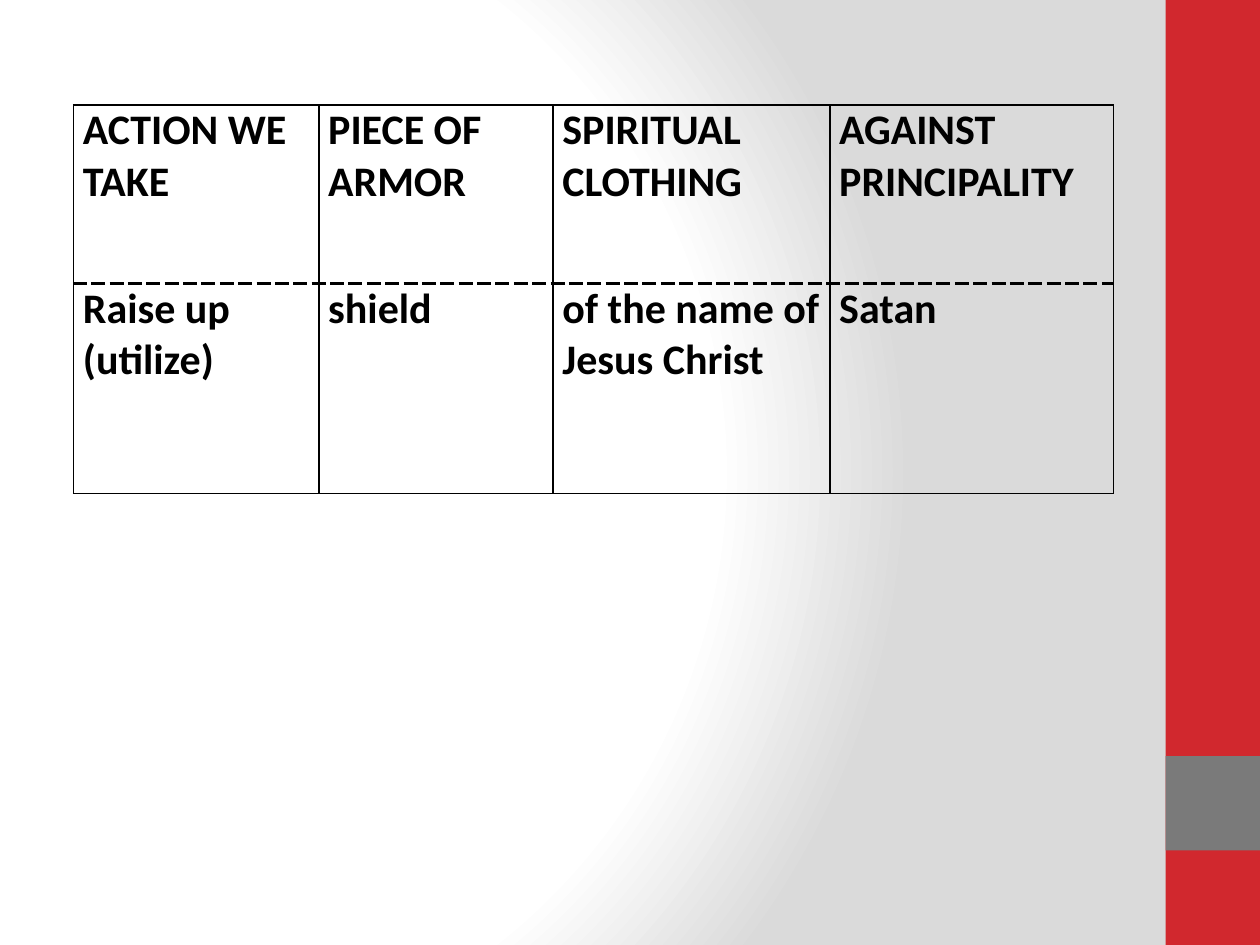
from pptx import Presentation
from pptx.dml.color import RGBColor
from pptx.enum.shapes import MSO_SHAPE as Shape
from pptx.oxml import parse_xml
from pptx.oxml.ns import nsdecls, qn
from pptx.util import Pt

BLACK = RGBColor(0x00, 0x00, 0x00)
WHITE = RGBColor(0xFF, 0xFF, 0xFF)
PALE_GRAY = RGBColor(0xDA, 0xDA, 0xDA)
RED = RGBColor(0xD1, 0x28, 0x2E)
GRAY = RGBColor(0x7A, 0x7A, 0x7A)

WIDTH, HEIGHT = 720, 540
BAND = 54

ROWS = [
    ["ACTION WE TAKE", "PIECE OF ARMOR", "SPIRITUAL CLOTHING", "AGAINST PRINCIPALITY"],
    ["Raise up (utilize)", "shield", "of the name of Jesus Christ", "Satan"],
]
COLUMN_WIDTHS = [140.2, 133.8, 158.2, 162]
ROW_HEIGHTS = [102, 120]


class SlideBuilder:
    font = {"name": "Calibri", "size": Pt(24), "bold": True}
    margins = {"margin_left": Pt(5.4), "margin_right": Pt(5.4),
               "margin_top": 0, "margin_bottom": 0}
    thin = (1, "solid")
    dashed = (2.25, "sysDash")

    def __init__(self, slide):
        self.slide = slide

    def background(self, stops, focus):
        self.slide.background.fill.solid()
        properties = self.slide.element.find(".//" + qn("p:bgPr"))
        stop_xml = "".join(
            f'<a:gs pos="{position * 1000}"><a:srgbClr val="{color}"/></a:gs>'
            for position, color in stops)
        focus_xml = " ".join(f'{side}="{value * 1000}"' for side, value in focus.items())
        properties.replace(properties[0], parse_xml(
            f'<a:gradFill {nsdecls("a")} rotWithShape="1"><a:gsLst>{stop_xml}</a:gsLst>'
            f'<a:path path="circle"><a:fillToRect {focus_xml}/></a:path></a:gradFill>'))

    def rectangle(self, left, top, width, height, color):
        shape = self.slide.shapes.add_shape(
            Shape.RECTANGLE, Pt(left), Pt(top), Pt(width), Pt(height))
        shape.shadow.inherit = False
        shape.fill.solid()
        shape.fill.fore_color.rgb = color
        shape.line.fill.background()

    def border(self, cell, side, style):
        width, dash = style
        cell._tc.get_or_add_tcPr().append(parse_xml(
            f'<a:ln{side} {nsdecls("a")} w="{Pt(width)}"><a:solidFill>'
            f'<a:srgbClr val="{BLACK}"/></a:solidFill><a:prstDash val="{dash}"/></a:ln{side}>'))

    def cell(self, cell, text, borders):
        for name, value in self.margins.items():
            setattr(cell, name, value)
        for side, style in borders.items():
            self.border(cell, side, style)
        cell.fill.background()
        cell.text = text
        font = cell.text_frame.paragraphs[0].runs[0].font
        for name, value in self.font.items():
            setattr(font, name, value)
        font.color.rgb = BLACK

    def table(self, left, top, widths, heights, rows):
        table = self.slide.shapes.add_table(
            len(rows), len(widths), Pt(left), Pt(top),
            Pt(sum(widths)), Pt(sum(heights))).table
        table.first_row = table.horz_banding = False
        for column, width in zip(table.columns, widths):
            column.width = Pt(width)
        for row, height in zip(table.rows, heights):
            row.height = Pt(height)
        for i, texts in enumerate(rows):
            # Only the line between rows is dashed
            borders = {
                "L": self.thin,
                "R": self.thin,
                "T": self.dashed if i else self.thin,
                "B": self.dashed if i < len(rows) - 1 else self.thin,
            }
            for j, text in enumerate(texts):
                self.cell(table.cell(i, j), text, borders)


def main():
    presentation = Presentation()
    presentation.slide_width, presentation.slide_height = Pt(WIDTH), Pt(HEIGHT)
    builder = SlideBuilder(presentation.slides.add_slide(presentation.slide_layouts[6]))

    # Background and side band
    builder.background([(0, WHITE), (75, WHITE), (100, PALE_GRAY)],
                       {"l": 20, "t": 50, "r": 100, "b": 50})
    builder.rectangle(WIDTH - BAND, 0, BAND, HEIGHT, RED)
    builder.rectangle(WIDTH - BAND, HEIGHT - 2 * BAND, BAND, BAND, GRAY)

    # Armor table
    builder.table(42, 60, COLUMN_WIDTHS, ROW_HEIGHTS, ROWS)

    presentation.save("out.pptx")


if __name__ == "__main__":
    main()
